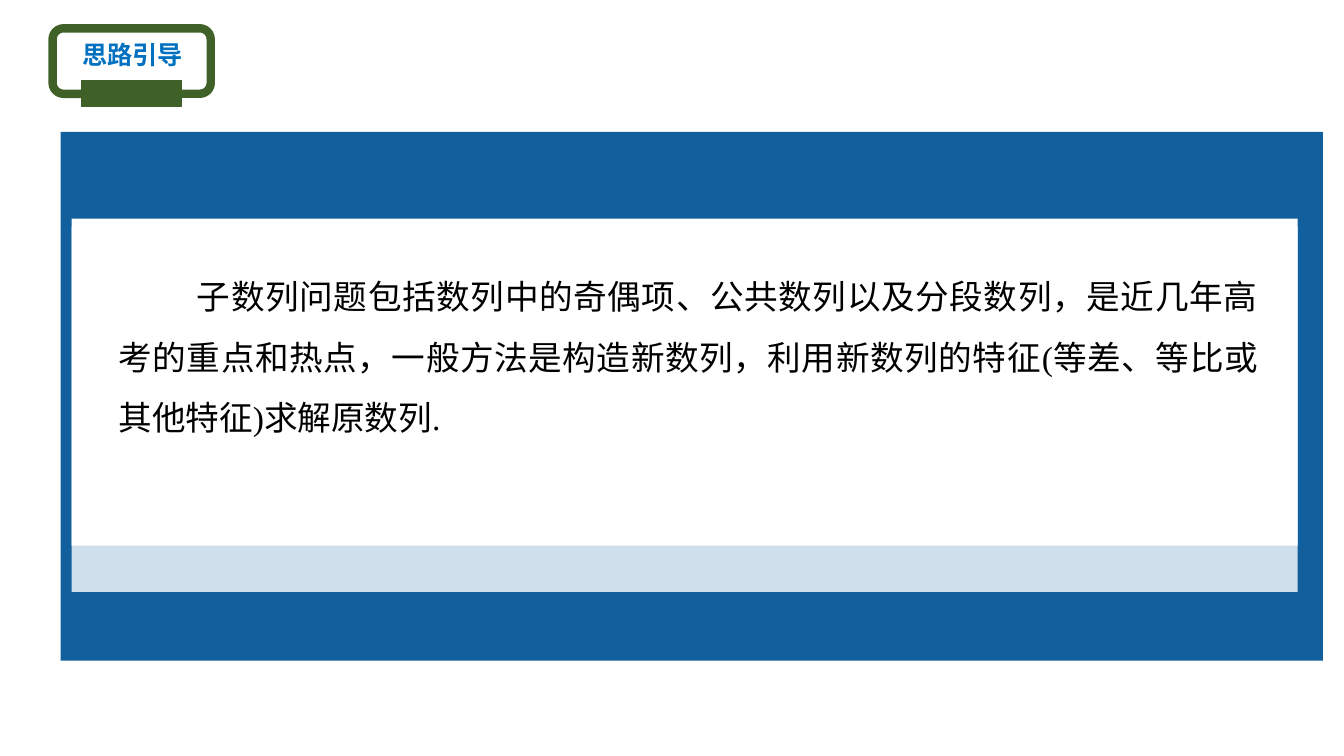
from lxml.etree import SubElement
from pptx import Presentation
from pptx.dml.color import RGBColor
from pptx.enum.shapes import MSO_SHAPE
from pptx.enum.text import MSO_AUTO_SIZE, PP_ALIGN
from pptx.oxml.ns import qn
from pptx.util import Pt

COLORS = {
    "panel": "11609D",
    "paper": "FFFFFF",
    "badge": "3F6128",
    "title": "0070C0",
    "body": "000000",
}
CJK_FONT = "Noto Sans CJK SC"


def write_text(frame, text, font=CJK_FONT, size=18, color="body", bold=False,
               align=PP_ALIGN.LEFT, indent=0, line_spacing=None):
    paragraph = frame.paragraphs[0]
    paragraph.alignment = align
    paragraph.line_spacing = line_spacing
    if indent:
        paragraph._p.get_or_add_pPr().set("indent", str(Pt(indent)))
    run = paragraph.add_run()
    run.text = text
    run.font.name = font
    run.font.size = Pt(size)
    run.font.bold = bold
    run.font.color.rgb = RGBColor.from_string(COLORS[color])
    SubElement(run._r.get_or_add_rPr(), qn("a:ea")).set("typeface", CJK_FONT)


class SlideBuilder:
    """Draws styled elements on one slide."""

    def __init__(self, presentation):
        self.slide = presentation.slides.add_slide(presentation.slide_layouts[6])
        self.shapes = self.slide.shapes

    def start_group(self):
        self.shapes = self.slide.shapes.add_group_shape().shapes

    def box(self, left, top, width, height, fill=None, alpha=None,
            line=None, line_width=1, kind=MSO_SHAPE.RECTANGLE):
        shape = self.shapes.add_shape(kind, Pt(left), Pt(top), Pt(width), Pt(height))
        shape.shadow.inherit = False
        if fill:
            shape.fill.solid()
            shape.fill.fore_color.rgb = RGBColor.from_string(COLORS[fill])
        else:
            shape.fill.background()
        if alpha:
            color = shape._element.spPr.find(qn("a:solidFill"))[0]
            SubElement(color, qn("a:alpha")).set("val", str(alpha * 1000))
        if line:
            shape.line.color.rgb = RGBColor.from_string(COLORS[line])
            shape.line.width = Pt(line_width)
        else:
            shape.line.fill.background()

    def text(self, left, top, width, height, text, grow=False, **style):
        shape = self.shapes.add_textbox(Pt(left), Pt(top), Pt(width), Pt(height))
        frame = shape.text_frame
        frame.word_wrap = True
        if grow:
            frame.auto_size = MSO_AUTO_SIZE.SHAPE_TO_FIT_TEXT
        write_text(frame, text, **style)


def main():
    presentation = Presentation()
    presentation.slide_width, presentation.slide_height = Pt(960), Pt(540)
    builder = SlideBuilder(presentation)

    builder.box(43.4, 94.3, 901.6, 377.7, fill="panel")
    builder.box(51.1, 156.2, 875.8, 233.5, fill="paper")
    builder.box(51.1, 162, 875.8, 260.8, fill="paper", alpha=80)
    builder.text(
        77.6, 179.3, 828, 133.2,
        "子数列问题包括数列中的奇偶项、公共数列以及分段数列，是近几年高考的重点和热点，"
        "一般方法是构造新数列，利用新数列的特征(等差、等比或其他特征)求解原数列.",
        grow=True, font="Times New Roman", size=24,
        align=PP_ALIGN.JUSTIFY, indent=56, line_spacing=1.5)

    builder.start_group()
    builder.box(37.6, 20.2, 113, 46.8, line="badge", line_width=6,
                kind=MSO_SHAPE.ROUNDED_RECTANGLE)
    builder.box(58.3, 57.6, 71.3, 18.7, fill="badge", line="badge")
    builder.text(51.1, 24.5, 87.1, 43.2, "思路引导",
                 color="title", bold=True, align=PP_ALIGN.CENTER)

    presentation.save("out.pptx")


if __name__ == "__main__":
    main()
